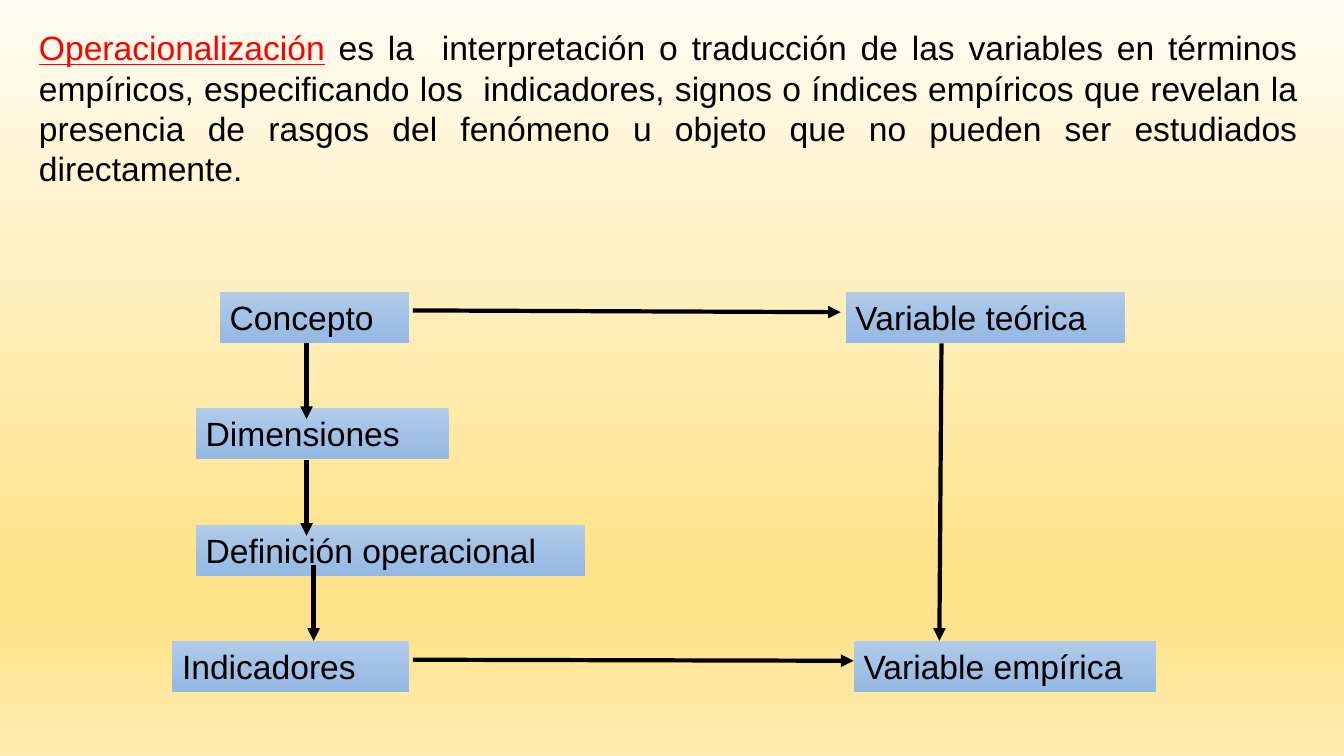
from dataclasses import dataclass

from lxml import etree
from pptx import Presentation
from pptx import util as u
from pptx.dml.color import RGBColor
from pptx.enum import shapes, text
from pptx.oxml import ns


@dataclass(frozen=True)
class Theme:
    font: str = "Arial"
    size: int = 24
    line_width: int = 3
    ink: str = "000000"
    accent: str = "FF0000"
    page_stops: tuple = ((0, "FFFCF2"), (74, "FFE38C"), (83, "FFE38C"), (100, "FFECB2"))
    box_stops: tuple = ((0, "B1CBE9"), (50, "A3C1E5"), (100, "93B9E4"))


THEME = Theme()
ROW_PITCH = 83
BOX_HEIGHT = 36.5

BOXES = (
    ("Concepto", 0, 34, 135.5),
    ("Variable teórica", 0, 481, 199.5),
    ("Dimensiones", 1, 16.75, 180.75),
    ("Definición operacional", 2, 16.75, 278),
    ("Indicadores", 3, 0, 169),
    ("Variable empírica", 3, 486.75, 216),
)
ARROWS = (
    (96, 36.5, 96, 90.5),
    (96, 120, 96, 174),
    (101, 194.5, 101, 249),
    (172, 13, 477.5, 14.25),
    (172, 262.5, 486.75, 263.25),
    (549.5, 36.5, 548, 249),
)


def fill_gradient(fill, element, stops):
    fill.gradient()
    fill.gradient_angle = 270
    stop_list = element.find(".//" + ns.qn("a:gsLst"))
    for stop in list(stop_list):
        stop_list.remove(stop)
    for percent, color in stops:
        stop = etree.SubElement(stop_list, ns.qn("a:gs"), pos=str(percent * 1000))
        etree.SubElement(stop, ns.qn("a:srgbClr"), val=color)


def format_span(span, color=THEME.ink):
    span.font.name = THEME.font
    span.font.size = u.Pt(THEME.size)
    span.font.color.rgb = RGBColor.from_string(color)


def add_definition(page, left, top, width, height):
    box = page.shapes.add_textbox(u.Pt(left), u.Pt(top), u.Pt(width), u.Pt(height))
    box.text_frame.word_wrap = True
    para = box.text_frame.paragraphs[0]
    para.alignment = text.PP_ALIGN.JUSTIFY
    term = para.add_run()
    term.text = "Operacionalización"
    format_span(term, THEME.accent)
    term.font.underline = True
    meaning = para.add_run()
    meaning.text = (
        " es la  interpretación o traducción de las variables en términos empíricos, "
        "especificando los  indicadores, signos o índices empíricos que revelan la "
        "presencia de rasgos del fenómeno u objeto que no pueden ser estudiados directamente."
    )
    format_span(meaning)


def add_concept_box(page, label, left, top, width, height):
    box = page.shapes.add_shape(
        shapes.MSO_SHAPE.RECTANGLE, u.Pt(left), u.Pt(top), u.Pt(width), u.Pt(height)
    )
    box.shadow.inherit = False
    fill_gradient(box.fill, box._element, THEME.box_stops)
    box.line.fill.background()
    frame = box.text_frame
    frame.text = label
    frame.word_wrap = True
    frame.vertical_anchor = text.MSO_ANCHOR.TOP
    para = frame.paragraphs[0]
    para.alignment = text.PP_ALIGN.LEFT
    format_span(para.runs[0])


def add_arrow(page, start_x, start_y, end_x, end_y):
    arrow = page.shapes.add_connector(
        shapes.MSO_CONNECTOR.STRAIGHT,
        u.Pt(start_x), u.Pt(start_y), u.Pt(end_x), u.Pt(end_y),
    )
    arrow.line.width = u.Pt(THEME.line_width)
    arrow.line.color.rgb = RGBColor.from_string(THEME.ink)
    etree.SubElement(arrow.line._get_or_add_ln(), ns.qn("a:tailEnd"), type="triangle")
    etree.SubElement(arrow._element.spPr, ns.qn("a:effectLst"))


def add_diagram(page, left, top):
    for label, row, offset, width in BOXES:
        add_concept_box(page, label, left + offset, top + row * ROW_PITCH, width, BOX_HEIGHT)
    for start_x, start_y, end_x, end_y in ARROWS:
        add_arrow(page, left + start_x, top + start_y, left + end_x, top + end_y)


def main():
    deck = Presentation()
    deck.slide_width, deck.slide_height = u.Pt(960), u.Pt(540)
    page = deck.slides.add_slide(deck.slide_layouts[6])
    fill_gradient(page.background.fill, page._element, THEME.page_stops)
    add_definition(page, 20.75, 16, 913, 124)
    add_diagram(page, 123, 208.75)
    deck.save("out.pptx")


if __name__ == "__main__":
    main()
